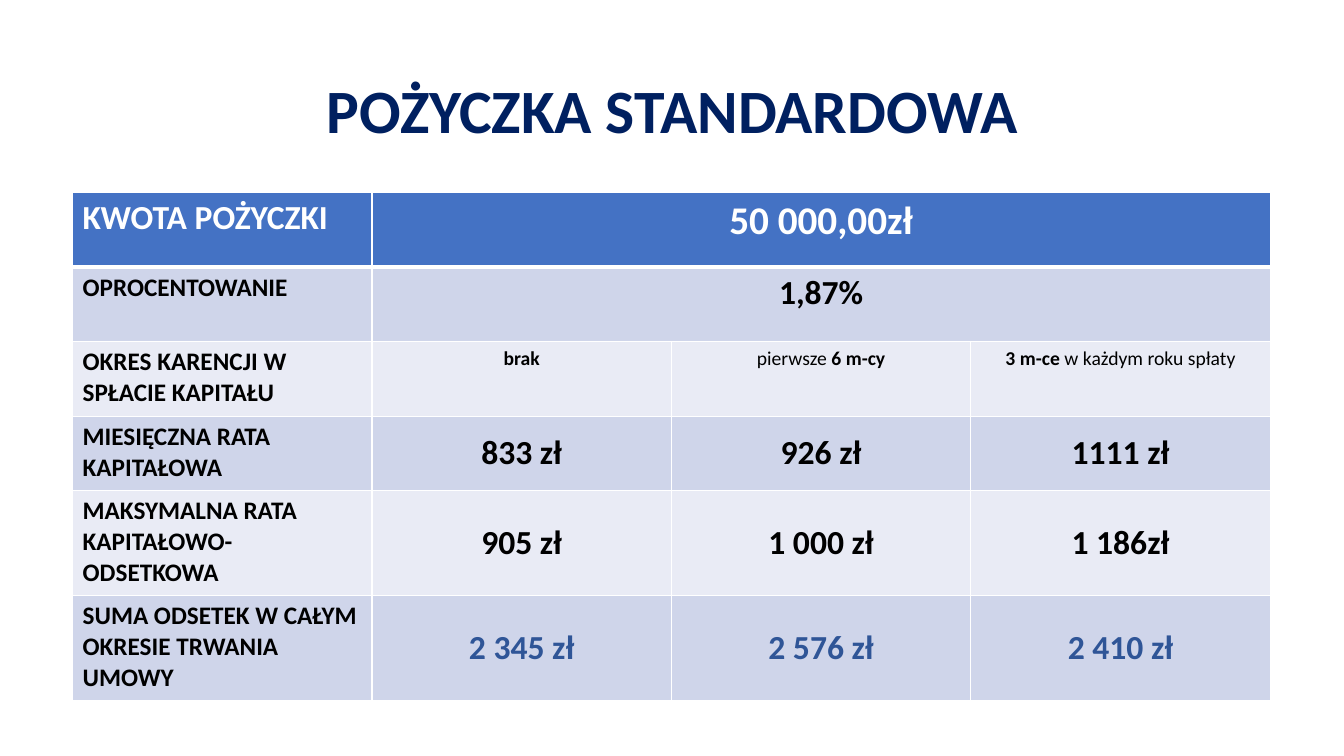
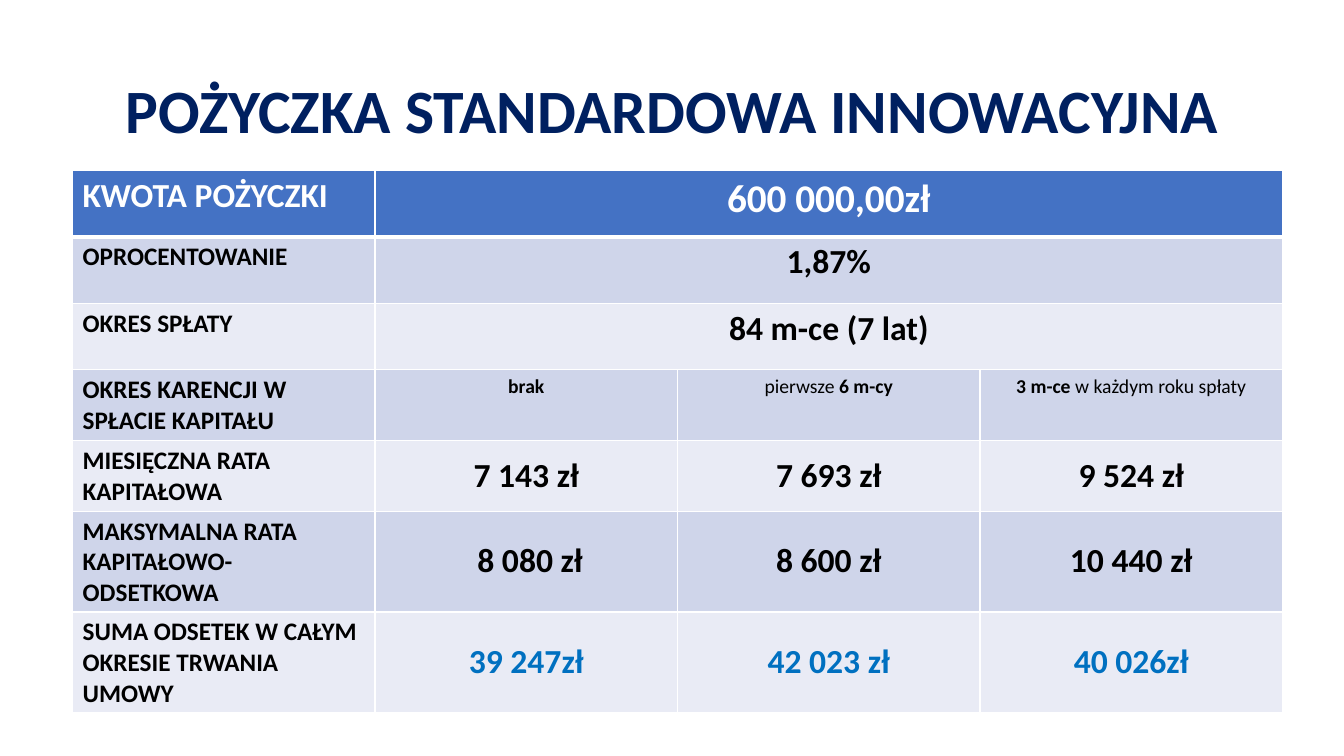
from lxml.etree import SubElement
from pptx import Presentation
from pptx.dml.color import RGBColor
from pptx.enum.text import MSO_ANCHOR, PP_ALIGN
from pptx.oxml.ns import qn
from pptx.util import Emu, Pt

THEME = {
    "font": "Calibri",
    "navy": "002060", "white": "FFFFFF", "black": "000000",
    "head": "4472C4", "bands": ("CFD5EA", "E9EBF5"),
    "title": 44, "amount": 28, "large": 24, "label": 18, "small": 14,
    "thin": 1, "thick": 3,
}

# Row kind: label, label size, value size, vertical anchor, is it tall
KINDS = {
    "amount": ("KWOTA POŻYCZKI", "large", "amount", MSO_ANCHOR.TOP, False),
    "rate": ("OPROCENTOWANIE", "label", "large", MSO_ANCHOR.TOP, False),
    "term": ("OKRES SPŁATY", "label", "large", MSO_ANCHOR.TOP, False),
    "grace": ("OKRES KARENCJI W SPŁACIE KAPITAŁU", "label", "small", MSO_ANCHOR.TOP, False),
    "month": ("MIESIĘCZNA RATA KAPITAŁOWA", "label", "large", MSO_ANCHOR.MIDDLE, False),
    "most": ("MAKSYMALNA RATA KAPITAŁOWO-ODSETKOWA", "label", "large", MSO_ANCHOR.MIDDLE, True),
    "sum": ("SUMA ODSETEK W CAŁYM OKRESIE TRWANIA UMOWY", "label", "large",
            MSO_ANCHOR.MIDDLE, True),
}

# Text between asterisks is bold
GRACE = ("*brak*", "pierwsze *6 m-cy*", "*3 m-ce* w każdym roku spłaty")

SLIDES = [
    {"title": "POŻYCZKA STANDARDOWA", "left": 72, "top": 191, "col": 297,
     "low": 74, "tall": 104, "accent": "2F5597",
     "rows": [
         ("amount", ("*50 000,00zł*",)),
         ("rate", ("*1,87%*",)),
         ("grace", GRACE),
         ("month", ("*833 zł*", "*926 zł*", "*1111 zł*")),
         ("most", ("*905 zł*", "*1 000 zł*", "*1 186zł*")),
         ("sum", ("*2 345 zł*", "*2 576 zł*", "*2 410 zł*")),
     ]},
    {"title": "POŻYCZKA STANDARDOWA INNOWACYJNA", "left": 72, "top": 169, "col": 300,
     "low": 66, "tall": 92, "accent": "0070C0",
     "rows": [
         ("amount", ("*600 000,00zł*",)),
         ("rate", ("*1,87%*",)),
         ("term", ("*84 m-ce (7 lat)*",)),
         ("grace", GRACE),
         ("month", ("*7 143 zł*", "*7 693 zł*", "*9 524 zł*")),
         ("most", ("* 8 080 zł*", "*8 600 zł*", "*10 440 zł*")),
         ("sum", ("*39 247zł*", "*42 023 zł*", "*40 026zł*")),
     ]},
]

COLS = 4
PAGE = (1333, 750)
TITLE = (92, 40, 1150, 145)


def px(num):
    """Convert px, 100 to the inch, to EMU."""
    return Emu(num * 9144)


def apply(item, values):
    for name, value in values.items():
        setattr(item, name, value)


def write(frame, text, size, color, align, **extra):
    """Fill the first paragraph, with bold between asterisks."""
    para = frame.paragraphs[0]
    apply(para, {"alignment": align, **extra})
    for num, part in enumerate(text.split("*")):
        if part:
            run = para.add_run()
            run.text = part
            apply(run.font, {"name": THEME["font"], "size": Pt(THEME[size]),
                             "bold": num % 2 == 1})
            run.font.color.rgb = RGBColor.from_string(color)


def edge(cell, row):
    """Draw white borders, thick under the header row."""
    thick = {0: "lnB", 1: "lnT"}.get(row)
    props = cell._tc.get_or_add_tcPr()
    for side in ("lnL", "lnR", "lnT", "lnB"):
        width = THEME["thick" if side == thick else "thin"]
        line = SubElement(props, qn("a:" + side), w=str(Pt(width)))
        fill = SubElement(line, qn("a:solidFill"))
        SubElement(fill, qn("a:srgbClr"), val=THEME["white"])


def paint(cell, row):
    edge(cell, row)
    cell.fill.solid()
    color = THEME["bands"][(row - 1) % 2] if row else THEME["head"]
    cell.fill.fore_color.rgb = RGBColor.from_string(color)


def add_title(slide, text):
    frame = slide.shapes.add_textbox(*map(px, TITLE)).text_frame
    apply(frame, {"word_wrap": True, "vertical_anchor": MSO_ANCHOR.MIDDLE})
    write(frame, f"*{text}*", "title", THEME["navy"], PP_ALIGN.CENTER, line_spacing=0.9)


def add_rates(slide, data):
    rows = data["rows"]
    highs = [data["tall" if KINDS[kind][-1] else "low"] for kind, _ in rows]
    box = (data["left"], data["top"], data["col"] * COLS, sum(highs))
    table = slide.shapes.add_table(len(rows), COLS, *map(px, box)).table
    for col in table.columns:
        col.width = px(data["col"])
    for row, (kind, values) in enumerate(rows):
        label, size, big, anchor, _ = KINDS[kind]
        table.rows[row].height = px(highs[row])
        for col in range(COLS):
            paint(table.cell(row, col), row)
        if len(values) == 1:
            table.cell(row, 1).merge(table.cell(row, COLS - 1))
        base = THEME["black"] if row else THEME["white"]
        write(table.cell(row, 0).text_frame, f"*{label}*", size, base, PP_ALIGN.LEFT)
        color = data["accent"] if kind == "sum" else base
        for col, text in enumerate(values, 1):
            cell = table.cell(row, col)
            cell.vertical_anchor = anchor
            write(cell.text_frame, text, big, color, PP_ALIGN.CENTER)


def main():
    deck = Presentation()
    apply(deck, {"slide_width": px(PAGE[0]), "slide_height": px(PAGE[1])})
    for data in SLIDES:
        slide = deck.slides.add_slide(deck.slide_layouts[6])
        add_title(slide, data["title"])
        add_rates(slide, data)
    deck.save("out.pptx")


if __name__ == "__main__":
    main()
